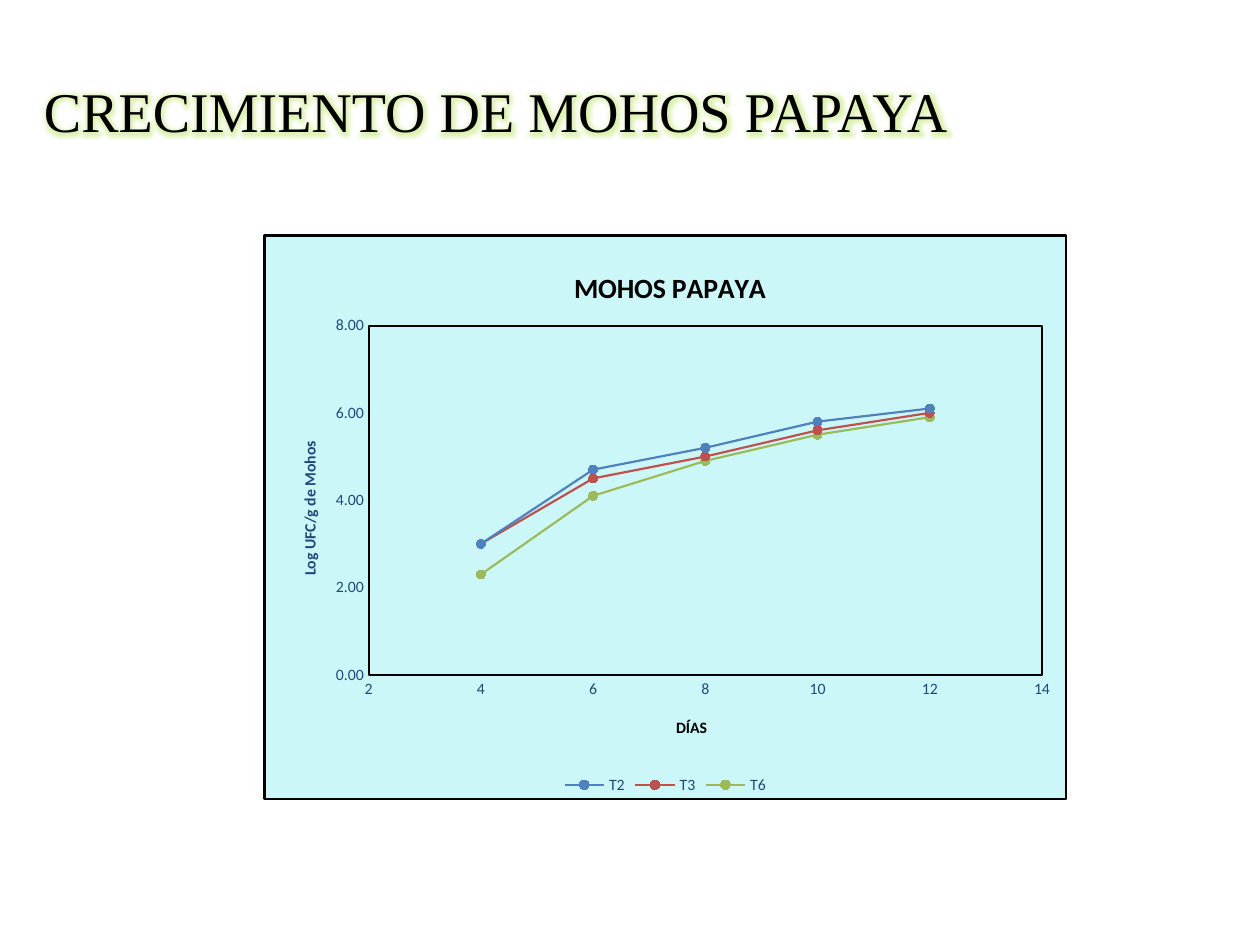
from dataclasses import dataclass

from lxml.etree import fromstring
from pptx import Presentation
from pptx.chart.data import XyChartData
from pptx.dml.color import RGBColor
from pptx.enum.chart import (XL_CHART_TYPE, XL_LEGEND_POSITION,
                             XL_MARKER_STYLE, XL_TICK_MARK)
from pptx.enum.text import MSO_ANCHOR, PP_ALIGN
from pptx.oxml.ns import nsdecls, qn
from pptx.util import Inches, Pt


@dataclass(frozen=True)
class Theme:
    heading_font: str = "Times New Roman"
    chart_font: str = "Calibri"
    ink: str = "000000"
    label: str = "1F497D"
    panel: str = "CCF7F8"
    glow: str = "C6E978"
    heading_size: int = 32
    chart_title_size: int = 16
    label_size: int = 9
    line_width: float = 1.25
    marker_size: int = 5


THEME = Theme()
DAYS = (4, 6, 8, 10, 12)
# Name, line colour, marker colour, values
TREATMENTS = (
    ("T2", "4F81BD", "4A80C3", (3, 4.7, 5.2, 5.8, 6.1)),
    ("T3", "C0504D", "C64B47", (3, 4.5, 5, 5.6, 6)),
    ("T6", "9BBB59", "9DC054", (2.3, 4.1, 4.9, 5.5, 5.9)),
)


def style_font(font, size, color, name=THEME.chart_font, bold=False):
    font.name, font.size, font.bold = name, Pt(size), bold
    font.color.rgb = RGBColor.from_string(color)


def style_line(line, color):
    line.color.rgb = RGBColor.from_string(color)
    line.width = Pt(THEME.line_width)


def frame_xml(fill):
    return fromstring(
        f'<c:spPr {nsdecls("c", "a")}>{fill}<a:ln w="{Pt(THEME.line_width)}">'
        f'<a:solidFill><a:srgbClr val="{THEME.ink}"/></a:solidFill></a:ln></c:spPr>')


def place(element, after, left, top, size=None):
    """Set a manual layout, in fractions of the chart."""
    for old in element.findall(qn("c:layout")):
        element.remove(old)
    parts = '<c:layoutTarget val="inner"/>' if size else ""
    parts += '<c:xMode val="edge"/><c:yMode val="edge"/>'
    parts += f'<c:x val="{left}"/><c:y val="{top}"/>'
    if size:
        parts += f'<c:w val="{size[0]}"/><c:h val="{size[1]}"/>'
    layout = fromstring(f'<c:layout {nsdecls("c")}><c:manualLayout>{parts}'
                        '</c:manualLayout></c:layout>')
    if after:
        element.find(qn(after)).addnext(layout)
    else:
        element.insert(0, layout)


def write_title(title, text, size, color, left, top):
    span = title.text_frame.paragraphs[0].add_run()
    span.text = text
    style_font(span.font, size, color, bold=True)
    place(title.element, "c:tx", left, top)


def add_heading(page, left, top, width, height):
    box = page.shapes.title
    box.left, box.top, box.width, box.height = left, top, width, height
    frame = box.text_frame
    frame.word_wrap = True
    frame.vertical_anchor = MSO_ANCHOR.MIDDLE
    para = frame.paragraphs[0]
    para.alignment = PP_ALIGN.CENTER
    span = para.add_run()
    span.text = "CRECIMIENTO DE MOHOS PAPAYA "
    style_font(span.font, THEME.heading_size, THEME.ink, THEME.heading_font)
    # Soft green glow around the letters
    glow = fromstring(
        f'<a:effectLst {nsdecls("a")}><a:glow rad="{Pt(8)}">'
        f'<a:srgbClr val="{THEME.glow}"><a:alpha val="60000"/></a:srgbClr>'
        '</a:glow></a:effectLst>')
    span.font.fill  # the fill comes before the effect
    para.runs[0]._r.rPr.find(qn("a:solidFill")).addnext(glow)


def style_axis(axis, low, high, number_format):
    axis.minimum_scale, axis.maximum_scale, axis.major_unit = low, high, 2
    axis.has_major_gridlines = False
    axis.major_tick_mark = axis.minor_tick_mark = XL_TICK_MARK.NONE
    axis.tick_labels.number_format = number_format
    axis.tick_labels.number_format_is_linked = False
    style_font(axis.tick_labels.font, THEME.label_size, THEME.label)
    style_line(axis.format.line, THEME.ink)


def add_growth_chart(page, left, top, width, height):
    data = XyChartData()
    for name, _, _, values in TREATMENTS:
        series = data.add_series(name)
        for day, value in zip(DAYS, values):
            series.add_data_point(day, value)
    chart = page.shapes.add_chart(XL_CHART_TYPE.XY_SCATTER_SMOOTH, left, top,
                                  width, height, data).chart
    style_font(chart.font, 10, THEME.ink)

    # Curves and markers
    plot = chart.plots[0]
    plot.vary_by_categories = False
    for series, (_, color, marker_color, _) in zip(plot.series, TREATMENTS):
        series.smooth = True
        style_line(series.format.line, color)
        marker = series.marker
        marker.style, marker.size = XL_MARKER_STYLE.CIRCLE, THEME.marker_size
        marker.format.fill.solid()
        marker.format.fill.fore_color.rgb = RGBColor.from_string(marker_color)
        marker.format.line.color.rgb = RGBColor.from_string(color)

    # Axes and titles
    days, counts = chart.category_axis, chart.value_axis
    style_axis(days, 2, 14, "General")
    style_axis(counts, 0, 8, "0.00")
    chart.has_title = True
    write_title(chart.chart_title, "MOHOS PAPAYA", THEME.chart_title_size,
                THEME.ink, 0.38, 0.05)
    write_title(days.axis_title, "DÍAS", THEME.label_size, THEME.ink, 0.51, 0.85)
    write_title(counts.axis_title, "Log UFC/g de Mohos", THEME.label_size,
                THEME.label, 0.04, 0.36)

    # Legend
    chart.has_legend = True
    chart.legend.position = XL_LEGEND_POSITION.BOTTOM
    chart.legend.include_in_layout = False
    style_font(chart.legend.font, THEME.label_size, THEME.label)

    # Panel and plot frame
    root = chart.element
    panel = f'<a:solidFill><a:srgbClr val="{THEME.panel}"/></a:solidFill>'
    root.find(qn("c:chart")).addnext(frame_xml(panel))
    plot_area = root.find(".//" + qn("c:plotArea"))
    place(plot_area, None, 0.13, 0.16, (0.84, 0.62))
    plot_area.append(frame_xml("<a:noFill/>"))


def main():
    deck = Presentation()
    deck.slide_width, deck.slide_height = Inches(10), Inches(7.5)
    page = deck.slides.add_slide(deck.slide_layouts[5])
    add_heading(page, Inches(0.2), Inches(0.25), Inches(7.56), Inches(1.25))
    add_growth_chart(page, Inches(2.09), Inches(1.86), Inches(6.38), Inches(4.49))
    deck.save("out.pptx")


if __name__ == "__main__":
    main()
